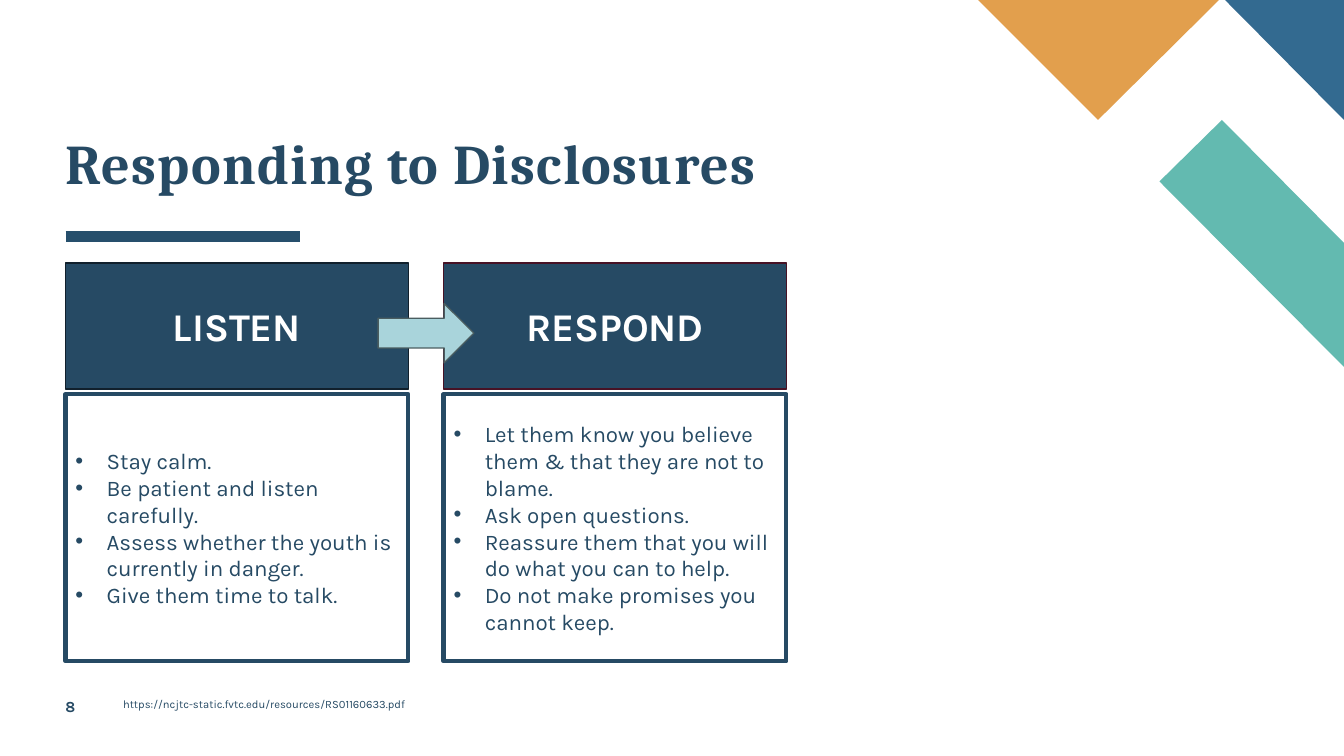
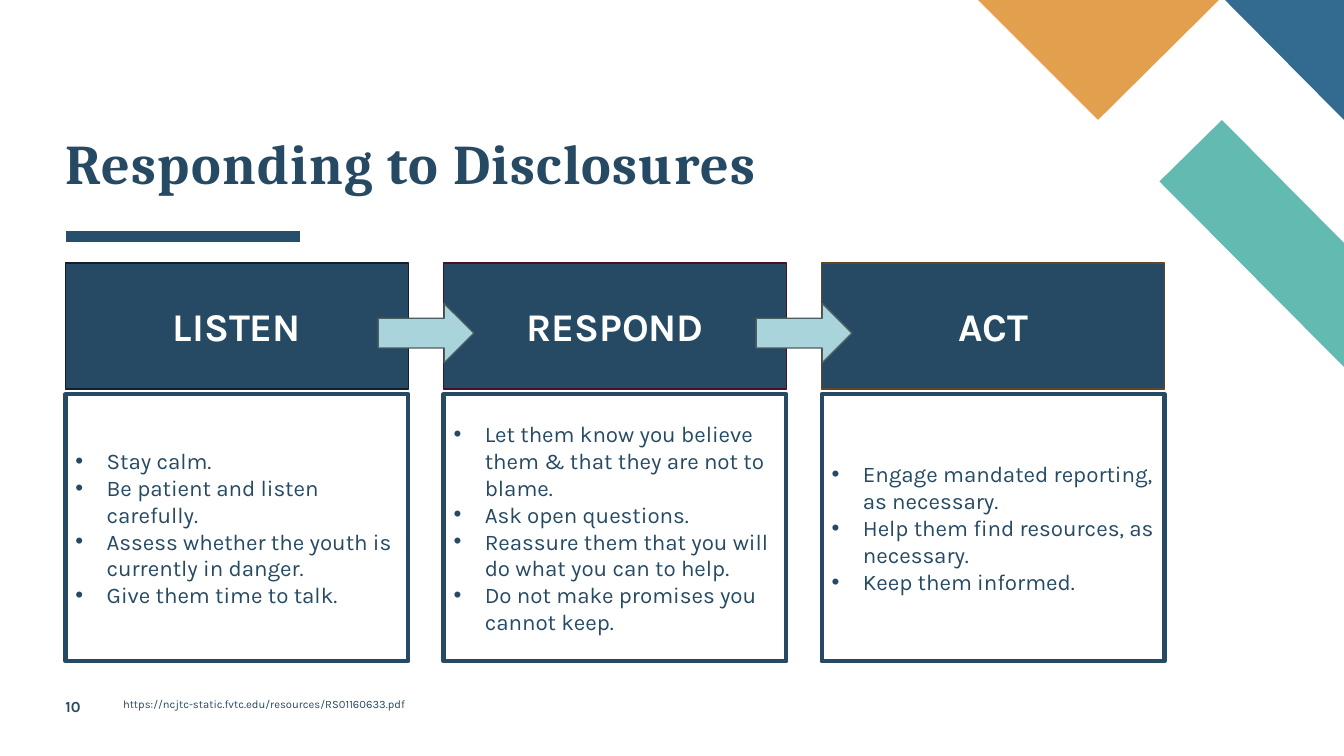
from lxml import etree
from pptx import Presentation
from pptx.dml.color import RGBColor
from pptx.enum.shapes import MSO_CONNECTOR, MSO_SHAPE
from pptx.enum.text import MSO_ANCHOR, MSO_AUTO_SIZE, PP_ALIGN
from pptx.oxml.ns import qn
from pptx.util import Emu, Pt

RECTANGLE = MSO_SHAPE.RECTANGLE
RIGHT_ARROW = MSO_SHAPE.RIGHT_ARROW
STRAIGHT = MSO_CONNECTOR.STRAIGHT
MIDDLE, BOTTOM, TOP = MSO_ANCHOR.MIDDLE, MSO_ANCHOR.BOTTOM, MSO_ANCHOR.TOP
LEFT, CENTER = PP_ALIGN.LEFT, PP_ALIGN.CENTER
NO_AUTOFIT = MSO_AUTO_SIZE.NONE

EMU_PER_PX = 9144
TITLE_ONLY = 5
TITLE_FONT, BODY_FONT = "Cambria", "Karla"
NAVY, RULE_BLUE, WHITE = "264A64", "264F6C", "FFFFFF"
ARROW_FILL, ARROW_LINE = "A9D4DB", "4A5D60"

MARGIN = 65
COLUMN_WIDTH, COLUMN_GAP = 340, 35
HEADER_TOP, HEADER_HEIGHT = 261, 125
BODY_TOP, BODY_HEIGHT = 391, 265
ARROW_TOP, ARROW_WIDTH, ARROW_HEIGHT = 301, 95, 59

CORNER_SHAPES = [
    ("63BAB0", [(1333, 364), (1333, 241), (1212, 119), (1150, 180)]),
    ("336A90", [(1333, 119), (1333, 0), (1215, 0)]),
    ("E29F4D", [(970, 0), (1089, 119), (1209, 0)]),
]
TITLE = "Responding to Disclosures"
SOURCE = "https://ncjtc-static.fvtc.edu/resources/RS01160633.pdf"
STEPS = [
    ("LISTEN", "11202C", [
        "Stay calm.",
        "Be patient and listen carefully.",
        "Assess whether the youth is currently in danger.",
        "Give them time to talk.",
    ]),
    ("RESPOND", "471225", [
        "Let them know you believe them & that they are not to blame.",
        "Ask open questions.",
        "Reassure them that you will do what you can to help.",
        "Do not make promises you cannot keep.",
    ]),
    ("ACT", "634622", [
        "Engage mandated reporting, as necessary.",
        "Help them find resources, as necessary.",
        "Keep them informed.",
    ]),
]
PAGES = [("8", STEPS[:2]), ("10", STEPS)]


def px(*lengths):
    return [Emu(length * EMU_PER_PX) for length in lengths]


def color(value):
    return RGBColor.from_string(value)


def style_font(para, size, value, bold=False, name=BODY_FONT):
    para.font.name = name
    para.font.size = Pt(size)
    para.font.bold = bold
    para.font.color.rgb = color(value)


def set_frame(frame, anchor, insets):
    frame.word_wrap = True
    frame.auto_size = NO_AUTOFIT
    frame.vertical_anchor = anchor
    (frame.margin_left, frame.margin_top,
     frame.margin_right, frame.margin_bottom) = px(*insets)


def add_bullet(para):
    properties = para._p.get_or_add_pPr()
    properties.set("marL", str(31 * EMU_PER_PX))
    properties.set("indent", str(-31 * EMU_PER_PX))
    tint = etree.SubElement(properties, qn("a:buClr"))
    etree.SubElement(tint, qn("a:srgbClr"), val=NAVY)
    etree.SubElement(properties, qn("a:buFont"), typeface="Arial")
    etree.SubElement(properties, qn("a:buChar"), char="•")


def add_box(page, kind, place, fill, line, line_width):
    box = page.shapes.add_shape(kind, *px(*place))
    box.shadow.inherit = False
    box.fill.solid()
    box.fill.fore_color.rgb = color(fill)
    box.line.color.rgb = color(line)
    box.line.width = Pt(line_width)
    return box


def add_label(page, place, text, size, insets, bold=False):
    frame = page.shapes.add_textbox(*px(*place)).text_frame
    set_frame(frame, TOP, insets)
    para = frame.paragraphs[0]
    para.text = text
    style_font(para, size, NAVY, bold)
    return para


def add_corner_shapes(page):
    for fill, points in CORNER_SHAPES:
        builder = page.shapes.build_freeform(*points[0], scale=EMU_PER_PX)
        builder.add_line_segments(points[1:], close=True)
        corner = builder.convert_to_shape()
        corner.shadow.inherit = False
        corner.fill.solid()
        corner.fill.fore_color.rgb = color(fill)
        corner.line.fill.background()


def add_rule(page):
    rule = page.shapes.add_connector(STRAIGHT, *px(MARGIN, 235, 298, 235))
    rule.line.color.rgb = color(RULE_BLUE)
    rule.line.width = Pt(8)
    etree.SubElement(rule._element.spPr, qn("a:effectLst"))


def set_title(page):
    title = page.shapes.title
    title.left, title.top, title.width, title.height = px(MARGIN, 22, 1008, 172)
    set_frame(title.text_frame, BOTTOM, (0, 0, 0, 0))
    para = title.text_frame.paragraphs[0]
    para.text = TITLE
    para.alignment = LEFT
    para.line_spacing = 0.8
    style_font(para, 40, NAVY, True, TITLE_FONT)
    para.runs[0]._r.get_or_add_rPr().set("spc", "100")


def add_step(page, left, heading, outline, points):
    header = add_box(page, RECTANGLE,
                     (left, HEADER_TOP, COLUMN_WIDTH, HEADER_HEIGHT),
                     NAVY, outline, 1)
    set_frame(header.text_frame, MIDDLE, (10, 5, 10, 5))
    para = header.text_frame.paragraphs[0]
    para.text = heading
    para.alignment = CENTER
    style_font(para, 28, WHITE, True)

    body = add_box(page, RECTANGLE,
                   (left, BODY_TOP, COLUMN_WIDTH, BODY_HEIGHT), WHITE, NAVY, 3)
    frame = body.text_frame
    set_frame(frame, MIDDLE, (10, 5, 10, 5))
    frame.text = "\n".join(points)
    for para in frame.paragraphs:
        para.alignment = LEFT
        add_bullet(para)
        style_font(para, 16, NAVY)


def add_steps(page, steps):
    lefts = [MARGIN + index * (COLUMN_WIDTH + COLUMN_GAP)
             for index in range(len(steps))]
    for left, step in zip(lefts, steps):
        add_step(page, left, *step)
    for left in lefts[1:]:
        arrow_left = left - (COLUMN_GAP + ARROW_WIDTH) // 2
        add_box(page, RIGHT_ARROW,
                (arrow_left, ARROW_TOP, ARROW_WIDTH, ARROW_HEIGHT),
                ARROW_FILL, ARROW_LINE, 1)


def add_footer(page, number):
    add_label(page, (MARGIN, 692, 57, 27), number, 11, (0, 0, 0, 0), True)
    para = add_label(page, (122, 688, 975, 40), SOURCE, 8, (0, 5, 10, 5))
    para.line_spacing = 0.9


def main():
    deck = Presentation()
    deck.slide_width, deck.slide_height = px(1333, 750)
    for number, steps in PAGES:
        page = deck.slides.add_slide(deck.slide_layouts[TITLE_ONLY])
        add_corner_shapes(page)
        add_rule(page)
        set_title(page)
        add_steps(page, steps)
        add_footer(page, number)
    deck.save("out.pptx")


if __name__ == "__main__":
    main()
